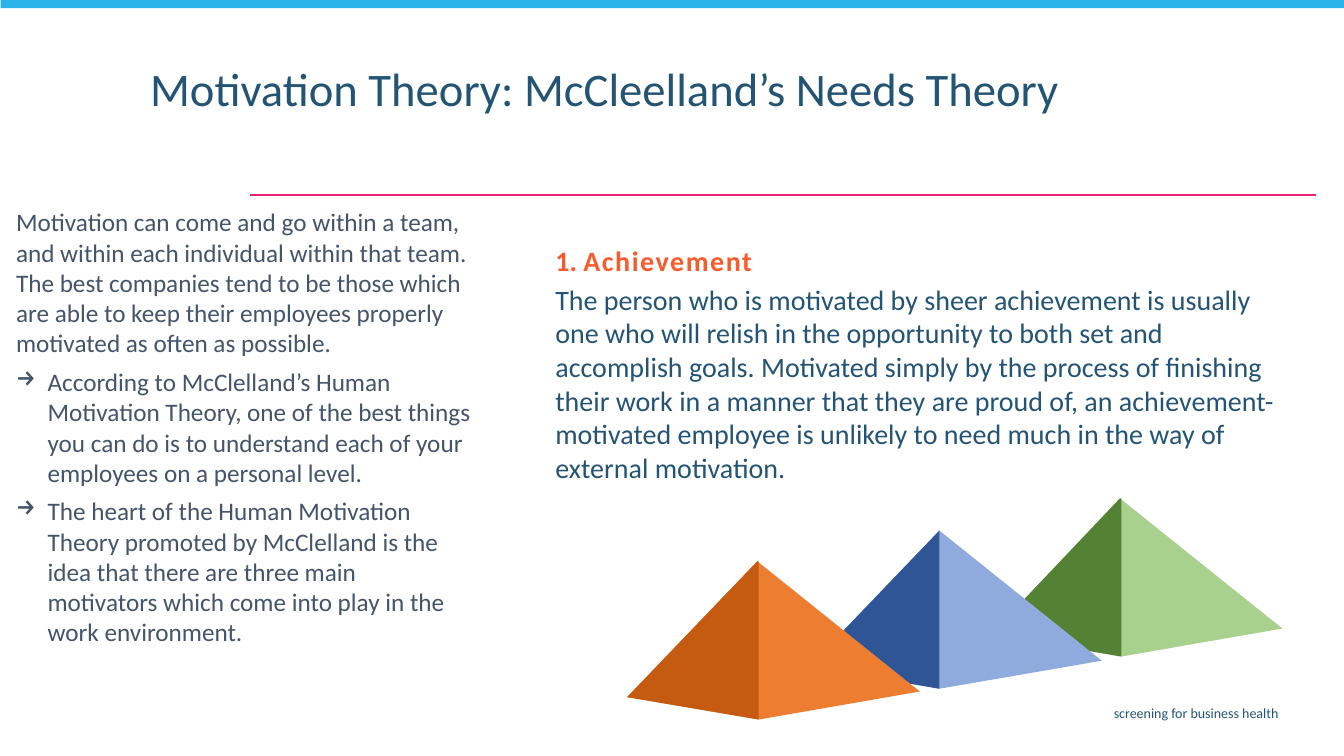
"""Build the slide on McClelland's needs theory."""
import pptx
import pptx.util
from pptx.dml.color import RGBColor
from pptx.enum.shapes import MSO_CONNECTOR, MSO_SHAPE
from pptx.enum.text import MSO_ANCHOR, PP_ALIGN
from pptx.oxml.ns import qn

Pt = pptx.util.Pt

COLORS = {
    "navy": "245473", "slate": "44546A", "coral": "F95C2C",
    "pink": "EC2179", "sky": "29B3E8",
    "green": "A9D18E", "dark green": "548235",
    "blue": "8FAADC", "dark blue": "2F5597",
    "orange": "ED7D31", "dark orange": "C55A11",
}

INTRO = (
    "Motivation can come and go within a team, and within each individual "
    "within that team. The best companies tend to be those which are able to "
    "keep their employees properly motivated as often as possible."
)
POINTS = (
    "According to McClelland’s Human Motivation Theory, one of the best things "
    "you can do is to understand each of your employees on a personal level.",
    "The heart of the Human Motivation Theory promoted by McClelland is the "
    "idea that there are three main motivators which come into play in the "
    "work environment.",
)
ACHIEVEMENT = (
    "The person who is motivated by sheer achievement is usually one who will "
    "relish in the opportunity to both set and accomplish goals. Motivated "
    "simply by the process of finishing their work in a manner that they are "
    "proud of, an achievement-motivated employee is unlikely to need much in "
    "the way of external motivation."
)


class Deck:
    """Hold the style and the current slide."""

    font = "Calibri"

    def __init__(self, s):
        self.s = s

    def color(self, name):
        return RGBColor.from_string(COLORS[name])

    def frame(self, sp, margins=(7.2, 3.6)):
        tf = sp.text_frame
        tf.word_wrap = True
        tf.vertical_anchor = MSO_ANCHOR.TOP
        tf.margin_left = tf.margin_right = Pt(margins[0])
        tf.margin_top = tf.margin_bottom = Pt(margins[1])
        return tf

    def place(self, sp, left, top, width, height):
        sp.left, sp.top, sp.width, sp.height = map(Pt, (left, top, width, height))

    def run(self, p, text, size, color, bold=False, spacing=0):
        r = p.add_run()
        r.text = text
        r.font.name, r.font.size, r.font.bold = self.font, Pt(size), bold
        r.font.color.rgb = self.color(color)
        if spacing:
            r.font._element.set("spc", str(round(spacing * 100)))

    def title(self, text, box):
        sp = self.s.shapes.title
        self.place(sp, *box)
        p = self.frame(sp).paragraphs[0]
        p.alignment, p.line_spacing = PP_ALIGN.LEFT, 0.9
        p.space_before = Pt(0)
        self.run(p, text, 33.3, "navy")

    def text(self, box, margins=(6.5, 3)):
        return self.frame(self.s.shapes.add_textbox(*map(Pt, box)), margins)

    def bullet(self, p, char, indent):
        pPr = p._p.get_or_add_pPr()
        pPr.set("marL", str(Pt(indent)))
        pPr.set("indent", str(-Pt(indent)))
        pPr.makeelement(qn("a:buChar"), {})
        bu = pPr.makeelement(qn("a:buChar"), {"char": char})
        pPr.append(bu)

    def paint(self, sp, color):
        sp.shadow.inherit = False
        sp.fill.solid()
        sp.fill.fore_color.rgb = self.color(color)
        sp.line.fill.background()

    def bar(self, color, box):
        self.paint(self.s.shapes.add_shape(MSO_SHAPE.RECTANGLE, *map(Pt, box)), color)

    def rule(self, color, x1, x2, y):
        sp = self.s.shapes.add_connector(
            MSO_CONNECTOR.STRAIGHT, Pt(x1), Pt(y), Pt(x2), Pt(y))
        sp.line.color.rgb, sp.line.width = self.color(color), Pt(1.5)
        spPr = sp._element.spPr
        spPr.append(spPr.makeelement(qn("a:effectLst"), {}))

    def polygon(self, color, points):
        fb = self.s.shapes.build_freeform(*points[0], scale=Pt(1))
        fb.add_line_segments(points[1:], close=True)
        self.paint(fb.convert_to_shape(), color)

    def pyramid(self, color, x, y):
        apex, base = (x, y), (x + 0.5, y + 112.8)
        left, right = (x - 92.5, y + 96.8), (x + 116.3, y + 92.8)
        self.polygon(color, [apex, left, base, right])
        self.polygon("dark " + color, [apex, left, base, (x + 0.5, y)])


def main():
    prs = pptx.Presentation()
    prs.slide_width, prs.slide_height = Pt(960), Pt(540)
    deck = Deck(prs.slides.add_slide(prs.slide_layouts[5]))

    deck.rule("pink", 178.6, 940.3, 139)
    deck.bar("sky", (0.5, -1.4, 959.5, 7.2))
    deck.title("Motivation Theory: McCleelland’s Needs Theory", (100, 44, 697, 54.7))

    tf = deck.text((262.8, 499.7, 657.4, 20.9), (7.2, 3.6))
    tf.paragraphs[0].alignment = PP_ALIGN.RIGHT
    deck.run(tf.paragraphs[0], "screening for business health", 10, "navy")

    tf = deck.text((5, 144.7, 337.7, 346.3))
    deck.run(tf.paragraphs[0], INTRO, 18, "slate")
    for point in POINTS:
        p = tf.add_paragraph()
        p.space_before = Pt(6)
        deck.bullet(p, "→", 22.5)
        deck.run(p, point, 18, "slate")

    for i, color in enumerate(("green", "blue", "orange")):
        deck.pyramid(color, 800.2 - 129.6 * i, 356.4 + 22.5 * i)

    tf = deck.text((390.2, 170.6, 536.4, 180.7))
    p = tf.paragraphs[0]
    deck.run(p, "1. ", 20, "coral", bold=True)
    deck.run(p, "Achievement", 20, "coral", bold=True, spacing=1.1)
    p = tf.add_paragraph()
    p.space_before = Pt(4)
    deck.run(p, ACHIEVEMENT, 20, "navy")

    prs.save("out.pptx")


if __name__ == "__main__":
    main()
